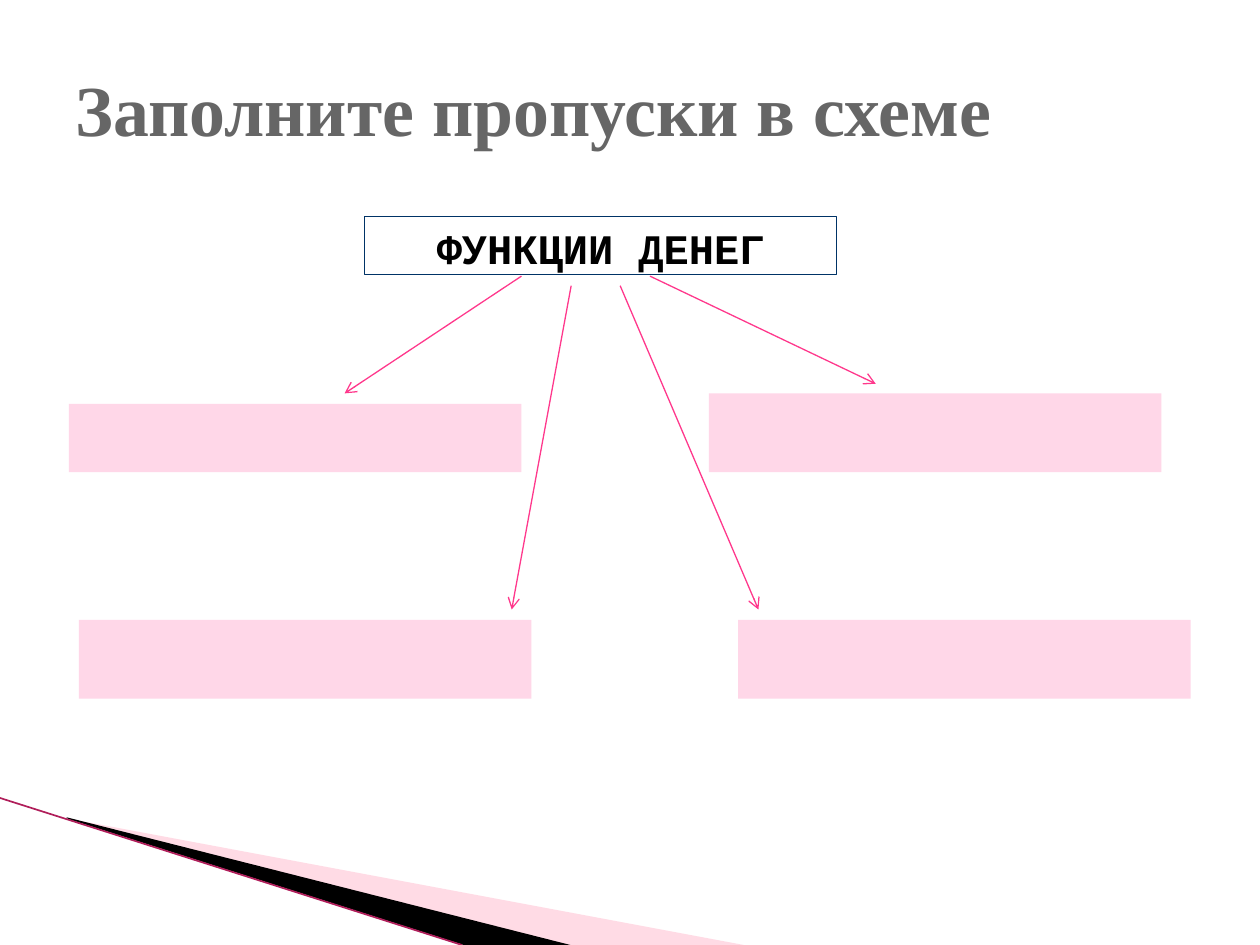
from dataclasses import dataclass

from lxml import etree
from pptx import Presentation
from pptx.dml.color import RGBColor
from pptx.enum import shapes, text
from pptx.oxml.ns import qn
from pptx.util import Pt


@dataclass(frozen=True)
class Theme:
    title: str = "666666"
    ink: str = "000000"
    frame: str = "003366"
    blank: str = "FFD7E8"
    arrow: str = "FF388C"
    wedge: str = "FFA5BF"
    edge: str = "B01E5A"
    serif: str = "Times New Roman"
    mono: str = "Courier New"
    big: float = 41
    mid: float = 24
    thin: float = 0.75


theme = Theme()


def paint(fill, color):
    fill.solid()
    fill.fore_color.rgb = RGBColor.from_string(color)


def write(shape, words, face, size, color, align):
    frame = shape.text_frame
    frame.word_wrap = True
    frame.text = words
    para = frame.paragraphs[0]
    para.alignment = align
    font = para.runs[0].font
    font.name, font.size, font.bold = face, Pt(size), True
    font.color.rgb = RGBColor.from_string(color)
    return frame


def add_rect(slide, box):
    rect = slide.shapes.add_shape(shapes.MSO_SHAPE.RECTANGLE, *map(Pt, box))
    rect.shadow.inherit = False
    return rect


def add_line(slide, start, end, color, width, arrow=False):
    line = slide.shapes.add_connector(
        shapes.MSO_CONNECTOR.STRAIGHT, *map(Pt, (*start, *end)))
    line.line.color.rgb = RGBColor.from_string(color)
    line.line.width = Pt(width)
    props = line.line._get_or_add_ln()
    if arrow:
        etree.SubElement(props, qn("a:tailEnd"), type="arrow")
    etree.SubElement(props.getparent(), qn("a:effectLst"))


def add_wedge(slide, points, color, alpha=None):
    path = slide.shapes.build_freeform(*points[0], scale=Pt(1))
    path.add_line_segments(points[1:], close=True)
    wedge = path.convert_to_shape()
    wedge.shadow.inherit = False
    paint(wedge.fill, color)
    wedge.line.fill.background()
    if alpha:
        tone = wedge.fill._xPr.find(".//" + qn("a:srgbClr"))
        etree.SubElement(tone, qn("a:alpha"), val=str(alpha * 1000))


def add_corner(slide, box):
    left, top, wide, high = box
    right, base = left + wide, top + high
    add_wedge(slide, [(left + 39.6, top + 12.4), (right, base),
                      (right - 100, base), (left + 39.6, top + 12)],
              theme.wedge, 40)
    add_wedge(slide, [(left + 38.2, top + 11.4), (left + 326, base),
                      (left + 265, base), (left + 38.9, top + 12)], theme.ink)
    add_line(slide, (left, top), (left + 264, base), theme.edge, 0.95)


def add_title(slide, box):
    label = slide.shapes.add_textbox(*map(Pt, box))
    frame = write(label, "Заполните пропуски в схеме", theme.serif,
                  theme.big, theme.title, text.PP_ALIGN.LEFT)
    frame.vertical_anchor = text.MSO_ANCHOR.MIDDLE


def add_scheme(slide, box):
    left, top, wide, high = box
    head = add_rect(slide, (left + 168.8, top, 270, 33))
    head.fill.background()
    head.line.color.rgb = RGBColor.from_string(theme.frame)
    head.line.width = Pt(theme.thin)
    frame = write(head, "ФУНКЦИИ ДЕНЕГ", theme.mono, theme.mid,
                  theme.ink, text.PP_ALIGN.CENTER)
    frame.vertical_anchor = text.MSO_ANCHOR.TOP
    frame.margin_top = Pt(3.2)
    frame.margin_bottom = Pt(0)

    blanks = [(0, 107, 39), (365.6, 101, 45),
              (382.4, 230.5, 45), (5.6, 230.5, 45)]
    for x, y, tall in blanks:
        blank = add_rect(slide, (left + x, top + y, 258.6, tall))
        paint(blank.fill, theme.blank)
        blank.line.fill.background()

    arrows = [((258.6, 34), (157.5, 101)), ((332, 34), (461, 95.5)),
              ((287, 39.5), (253, 224.5)), ((315, 39.5), (394, 224.5))]
    for start, end in arrows:
        add_line(slide, (left + start[0], top + start[1]),
                 (left + end[0], top + end[1]),
                 theme.arrow, theme.thin, arrow=True)


def main():
    deck = Presentation()
    deck.slide_width, deck.slide_height = Pt(720), Pt(540)
    slide = deck.slides.add_slide(deck.slide_layouts[6])
    add_corner(slide, (0, 456, 425, 84))
    add_title(slide, (36, 22.3, 648, 78.5))
    add_scheme(slide, (39.4, 123.8, 641, 275.5))
    deck.save("out.pptx")


if __name__ == "__main__":
    main()
